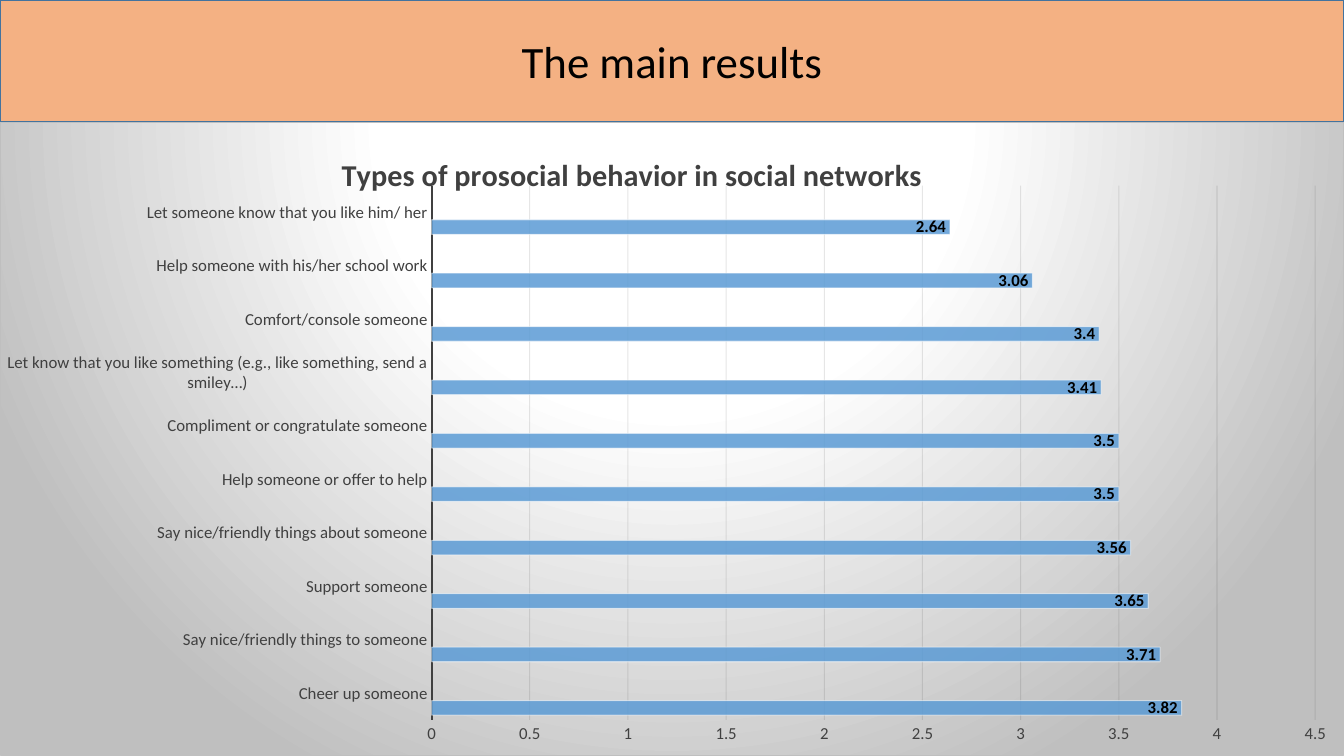
import pptx
import pptx.chart.data
import pptx.dml.color
import pptx.enum.chart
import pptx.enum.text
import pptx.oxml
import pptx.oxml.ns
import pptx.util

Inches = pptx.util.Inches
Pt = pptx.util.Pt
qn = pptx.oxml.ns.qn

WIDE, HIGH, HEAD = 13.33, 7.5, 1.21
HUES = {
    "peach": "F4B183", "edge": "43739E", "black": "000000", "white": "FFFFFF",
    "text": "404040", "grid": "0D0D0D", "grey": "BFBFBF",
    "blue": "5B9BD5", "orange": "ED7D31", "silver": "A5A5A5",
}
MEANS = [
    ("Cheer up someone", 3.82),
    ("Say nice/friendly things to someone", 3.71),
    ("Support someone", 3.65),
    ("Say nice/friendly things about someone", 3.56),
    ("Help someone or offer to help", 3.5),
    ("Compliment or congratulate someone", 3.5),
    ("Let know that you like something (e.g., like something, send a smiley…)", 3.41),
    ("Comfort/console someone", 3.4),
    ("Help someone with his/her school work", 3.06),
    ("Let someone know that you like him/ her", 2.64),
]
SERIES = [("blue", "black"), ("orange", "white"), ("silver", "white")]

GLOW = f"""<c:spPr {pptx.oxml.ns.nsdecls("c", "a")}>
<a:gradFill rotWithShape="1"><a:gsLst>
<a:gs pos="0"><a:srgbClr val="{HUES['white']}"/></a:gs>
<a:gs pos="39000"><a:srgbClr val="{HUES['white']}"/></a:gs>
<a:gs pos="100000"><a:srgbClr val="{HUES['grey']}"/></a:gs>
</a:gsLst><a:path path="circle">
<a:fillToRect l="50000" t="-80000" r="50000" b="180000"/></a:path></a:gradFill>
<a:ln w="9525"><a:solidFill><a:srgbClr val="{HUES['grey']}"/></a:solidFill></a:ln>
</c:spPr>"""


def rgb(hue):
    return pptx.dml.color.RGBColor.from_string(HUES[hue])


def fade(node, *shares):
    """Set the opacity, in percent, of each colour below the node in turn."""
    for tint, share in zip(node.iter(qn("a:srgbClr")), shares):
        tint.append(pptx.oxml.parse_xml(
            f'<a:alpha {pptx.oxml.ns.nsdecls("a")} val="{share * 1000}"/>'))


def place(node, index, inner=False, **spots):
    """Give a chart part a manual layout, in shares of the chart size."""
    for old in node.findall(qn("c:layout")):
        node.remove(old)
    parts = '<c:layoutTarget val="inner"/>' if inner else ""
    parts += "".join(f'<c:{key}Mode val="edge"/>' for key in "xy")
    parts += "".join(f'<c:{key} val="{val}"/>' for key, val in spots.items())
    node.insert(index, pptx.oxml.parse_xml(
        f'<c:layout {pptx.oxml.ns.nsdecls("c")}><c:manualLayout>{parts}'
        "</c:manualLayout></c:layout>"))


class Deck:
    def __init__(self, face):
        self.face = face
        self.show = pptx.Presentation()
        self.show.slide_width = Inches(WIDE)
        self.show.slide_height = Inches(HIGH)
        self.slide = self.show.slides.add_slide(self.show.slide_layouts[5])

    def style(self, font, size, hue, bold=False):
        font.name, font.size, font.bold = self.face, Pt(size), bold
        font.color.rgb = rgb(hue)

    def line(self, line, hue, width):
        line.color.rgb = rgb(hue)
        line.width = Pt(width)

    def title(self, text):
        band = self.slide.shapes.title
        band.left, band.top = Inches(0), Inches(0)
        band.width, band.height = Inches(WIDE), Inches(HEAD)
        band.fill.solid()
        band.fill.fore_color.rgb = rgb("peach")
        self.line(band.line, "edge", 1)
        frame = band.text_frame
        frame.auto_size = pptx.enum.text.MSO_AUTO_SIZE.NONE
        frame.vertical_anchor = pptx.enum.text.MSO_ANCHOR.MIDDLE
        para = frame.paragraphs[0]
        para.alignment = pptx.enum.text.PP_ALIGN.CENTER
        run = para.add_run()
        run.text = text
        self.style(run.font, 32, "black")

    def chart(self, head):
        data = pptx.chart.data.CategoryChartData()
        data.categories = [name for name, mean in MEANS]
        for index in range(len(SERIES)):
            data.add_series(f"Series {index + 1}",
                            [None if index else mean for name, mean in MEANS])
        chart = self.slide.shapes.add_chart(
            pptx.enum.chart.XL_CHART_TYPE.BAR_CLUSTERED, Inches(0), Inches(HEAD),
            Inches(WIDE), Inches(HIGH - HEAD), data).chart
        self.style(chart.font, 10, "black")
        chart.has_legend = False
        root = chart._chartSpace
        root.find(qn("c:chart")).addnext(pptx.oxml.parse_xml(GLOW))
        place(root.find(".//" + qn("c:plotArea")), 0, True,
              x=0.321, y=0.1, w=0.658, h=0.844)

        chart.has_title = True
        run = chart.chart_title.text_frame.paragraphs[0].add_run()
        run.text = head
        self.style(run.font, 21.6, "text", True)
        chart.chart_title.include_in_layout = False
        place(root.find(".//" + qn("c:title")), 1, x=0.25, y=0.04)

        self.axes(chart)
        plot = chart.plots[0]
        plot.gap_width, plot.overlap = 65, 0
        plot.vary_by_categories = False
        for series, hues in zip(plot.series, SERIES):
            self.bars(series, *hues)

    def axes(self, chart):
        for axis in (chart.category_axis, chart.value_axis):
            self.style(axis.tick_labels.font, 12, "text")
            axis.major_tick_mark = pptx.enum.chart.XL_TICK_MARK.NONE
            axis.minor_tick_mark = pptx.enum.chart.XL_TICK_MARK.NONE
        self.line(chart.category_axis.format.line, "text", 1.5)
        scale = chart.value_axis
        scale.minimum_scale, scale.maximum_scale, scale.major_unit = 0, 4.5, 0.5
        scale.format.line.fill.background()
        scale.has_major_gridlines = True
        self.line(scale.major_gridlines.format.line, "grid", 0.75)
        fade(scale._element.find(qn("c:majorGridlines")), 10)

    def bars(self, series, hue, ink):
        series.invert_if_negative = False
        series.format.fill.solid()
        series.format.fill.fore_color.rgb = rgb(hue)
        self.line(series.format.line, "white", 0.75)
        fade(series._element, 85, 50)
        labels = series.data_labels
        labels.show_value = True
        labels.position = pptx.enum.chart.XL_LABEL_POSITION.INSIDE_END
        self.style(labels.font, 12, ink, True)


def main():
    deck = Deck("Calibri")
    deck.title("The main results")
    deck.chart("Types of prosocial behavior in social networks")
    deck.show.save("out.pptx")


if __name__ == "__main__":
    main()
